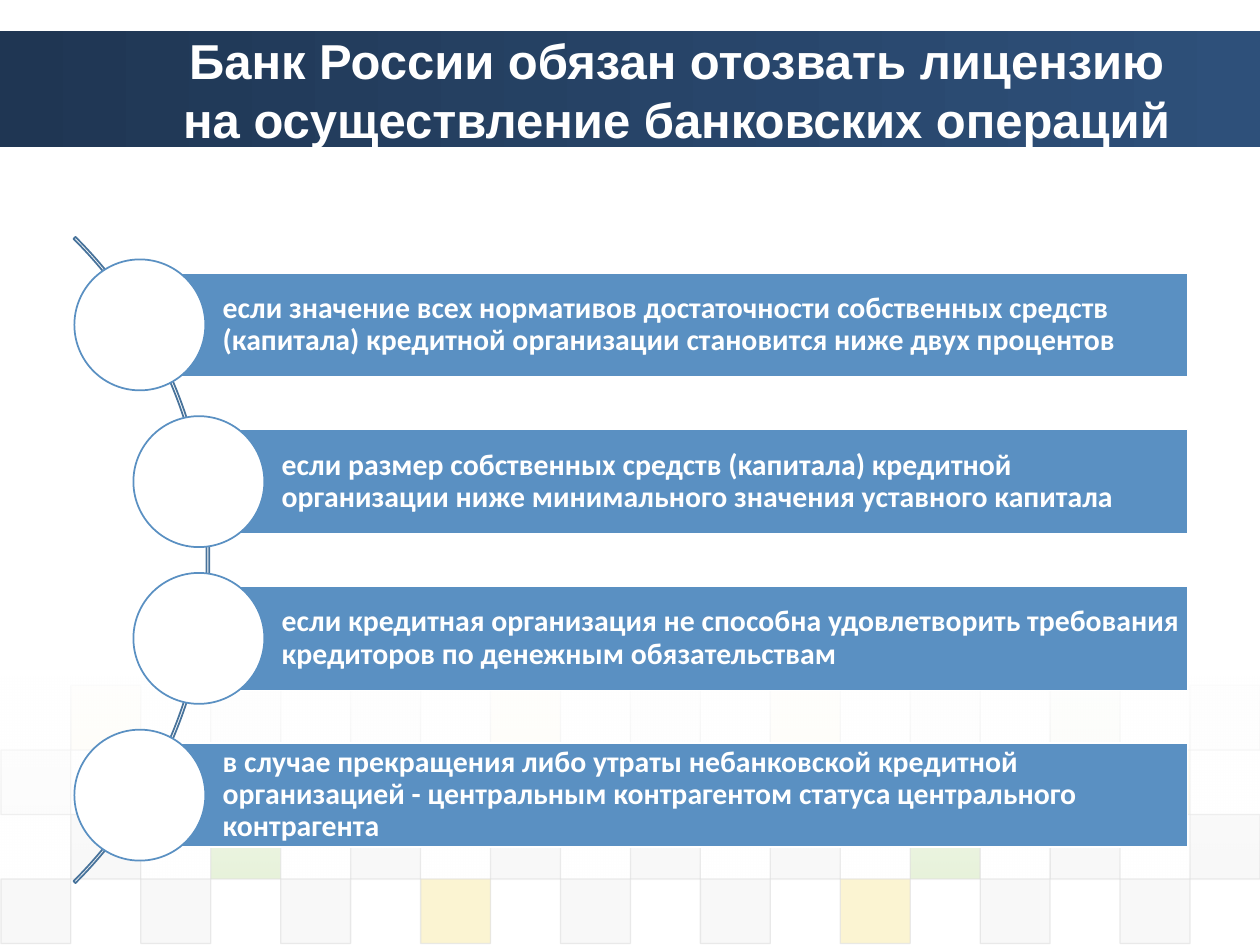
from lxml.etree import SubElement
from pptx import Presentation
from pptx.dml.color import RGBColor
from pptx.enum.shapes import MSO_SHAPE
from pptx.enum.text import MSO_ANCHOR, PP_ALIGN
from pptx.oxml.ns import qn
from pptx.util import Cm, Pt

COLOURS = {
    "white": "FFFFFF",
    "navy": "1F3653",
    "steel": "2E507A",
    "bar": "5A90C2",
    "arc": "48739B",
    "grey": "DDDDDD",
    "pale": "EAEAEA",
    "yellow": "EFC821",
    "green": "8AC246",
}
TITLE = "Банк России обязан отозвать лицензию на осуществление банковских операций"
GROUNDS = [
    (2.82, "если значение всех нормативов достаточности собственных средств "
           "(капитала) кредитной организации становится ниже двух процентов"),
    (4.01, "если размер собственных средств (капитала) кредитной "
           "организации ниже минимального значения уставного капитала"),
    (4.01, "если кредитная организация не способна удовлетворить требования "
           "кредиторов по денежным обязательствам"),
    (2.82, "в случае прекращения либо утраты небанковской кредитной "
           "организацией - центральным контрагентом статуса центрального контрагента"),
]
MOSAIC = [
    (5, {1: "yellow", 3: "pale", 5: "pale", 7: "yellow", 9: "grey",
         11: "yellow", 13: "pale", 15: "green", 17: "pale"}),
    (10, {0: "grey", 2: "grey", 16: "yellow"}),
    (20, {column: "green" if column in (3, 13) else "grey" for column in range(1, 18, 2)}),
    (20, {column: "yellow" if column in (6, 12) else "grey" for column in range(0, 17, 2)}),
]


class SlideBuilder:
    """Holds the style and the current slide."""

    def __init__(self, slide):
        self.slide = slide

    def colour(self, name):
        return RGBColor.from_string(COLOURS[name])

    def shape(self, kind, left, top, width, height, fill=None, line=None, weight=1):
        shape = self.slide.shapes.add_shape(kind, Cm(left), Cm(top), Cm(width), Cm(height))
        shape.shadow.inherit = False
        if fill:
            shape.fill.solid()
            shape.fill.fore_color.rgb = self.colour(fill)
        else:
            shape.fill.background()
        if line:
            shape.line.color.rgb = self.colour(line)
            shape.line.width = Pt(weight)
        else:
            shape.line.fill.background()
        return shape

    def fade(self, shape, *opacities):
        for colour, opacity in zip(list(shape.element.iter(qn("a:srgbClr"))), opacities):
            SubElement(colour, qn("a:alpha")).set("val", str(opacity * 1000))

    def gradient(self, top, height, names, angle):
        band = self.shape(MSO_SHAPE.RECTANGLE, 0, top, 25.4, height)
        band.fill.gradient()
        band.fill.gradient_angle = angle
        for stop, name, position in zip(band.fill.gradient_stops, names, (0, 1)):
            stop.color.rgb = self.colour(name)
            stop.position = position
        return band

    def tile(self, column, row, fill, opacity):
        tile = self.shape(MSO_SHAPE.RECTANGLE, 0.02 + column * 1.41, 13.82 + row * 1.3,
                          1.41, 1.3, fill, "grey", 0.75)
        self.fade(tile, opacity, 60)

    def text(self, shape, text, font, size, alignment, insets):
        frame = shape.text_frame
        frame.word_wrap = True
        frame.vertical_anchor = MSO_ANCHOR.MIDDLE
        frame.margin_left, frame.margin_top, frame.margin_right, frame.margin_bottom = map(Cm, insets)
        paragraph = frame.paragraphs[0]
        paragraph.text = text
        paragraph.alignment = alignment
        paragraph.font.name = font
        paragraph.font.size = Pt(size)
        paragraph.font.bold = True
        paragraph.font.color.rgb = self.colour("white")
        return paragraph

    def title(self, text):
        box = self.slide.shapes.add_textbox(Cm(3.38), Cm(0.63), Cm(20.52), Cm(2.34))
        self.text(box, text, "Arial", 28, PP_ALIGN.CENTER, (0.25, 0.13, 0.25, 0.13))

    def arc(self):
        arc = self.shape(MSO_SHAPE.BLOCK_ARC, -14.2, 2.08, 18.42, 18.42, line="arc")
        for index, value in enumerate((189, 27, 0.003)):
            arc.adjustments[index] = value

    def ground(self, centre_x, centre_y, text):
        bar = self.shape(MSO_SHAPE.RECTANGLE, centre_x, centre_y - 1.05, 23.94 - centre_x, 2.1,
                         "bar", "white")
        paragraph = self.text(bar, text, "Calibri", 17, PP_ALIGN.LEFT, (1.67, 0.13, 0.1, 0.13))
        paragraph.line_spacing = 0.9
        self.shape(MSO_SHAPE.OVAL, centre_x - 1.32, centre_y - 1.32, 2.64, 2.64, "white", "bar")


def main():
    presentation = Presentation()
    presentation.slide_width, presentation.slide_height = Cm(25.4), Cm(19.05)
    builder = SlideBuilder(presentation.slides.add_slide(presentation.slide_layouts[6]))
    builder.gradient(0.63, 2.34, ("navy", "steel"), 0)
    for row, (opacity, tiles) in enumerate(MOSAIC):
        for column, fill in tiles.items():
            builder.tile(column, row, fill, opacity)
    veil = builder.gradient(13.64, 4.11, ("white", "white"), 270)
    builder.fade(veil, 90, 0)
    builder.title(TITLE)
    builder.arc()
    for index, (centre_x, text) in enumerate(GROUNDS):
        builder.ground(centre_x, 6.55 + index * 3.16, text)
    presentation.save("out.pptx")


if __name__ == "__main__":
    main()
